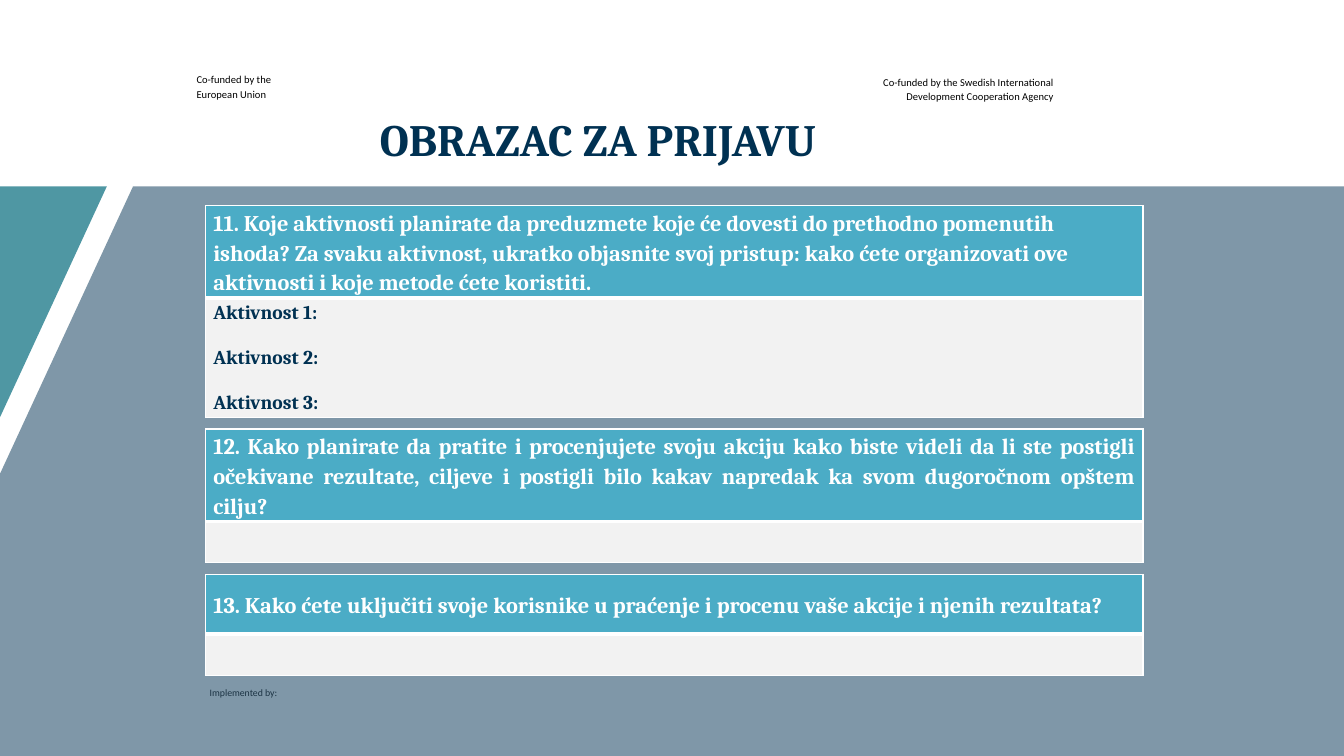
import pptx
import pptx.dml.color
import pptx.enum.text
import pptx.oxml
import pptx.oxml.ns
import pptx.util
import lxml.etree

Pt = pptx.util.Pt
ALIGN = pptx.enum.text.PP_ALIGN
MIDDLE = pptx.enum.text.MSO_ANCHOR.MIDDLE
WIDE, HIGH = 960, 540
COLORS = {"navy": "003152", "teal": "4F97A3", "head": "4BACC6",
          "body": "F2F2F2", "white": "FFFFFF", "gray": "373435",
          "black": "000000"}


def tint(name):
    return pptx.dml.color.RGBColor.from_string(COLORS[name])


def edge(side, width):
    """Return one white cell border; side is L, R, T or B."""
    return pptx.oxml.parse_xml(
        f'<a:ln{side} {pptx.oxml.ns.nsdecls("a")} w="{Pt(width)}"><a:solidFill>'
        f'<a:srgbClr val="{COLORS["white"]}"/></a:solidFill></a:ln{side}>')


class Form:
    def __init__(self, deck):
        self.slide = deck.slides.add_slide(deck.slide_layouts[5])
        self.shapes = self.slide.shapes

    def words(self, frame, text, size, color, font="Cambria", bold=True,
              align=ALIGN.LEFT, lines=1.0, before=0):
        frame.text = text
        frame.word_wrap = True
        for i, para in enumerate(frame.paragraphs):
            para.alignment = align
            para.line_spacing = lines
            para.space_before = Pt(before if i else 0)
            for run in para.runs:
                run.font.size = Pt(size)
                run.font.name = font
                run.font.bold = bold
                run.font.color.rgb = tint(color)

    def title(self, text, box):
        head = self.shapes.title
        head.left, head.top, head.width, head.height = map(Pt, box)
        head.text_frame.vertical_anchor = MIDDLE
        self.words(head.text_frame, text, 32, "navy", align=ALIGN.CENTER,
                   lines=0.9)

    def label(self, text, box, size=7.5, color="black", **style):
        frame = self.shapes.add_textbox(*map(Pt, box)).text_frame
        frame.margin_left = frame.margin_right = 0
        frame.margin_top = frame.margin_bottom = 0
        self.words(frame, text, size, color, font="Calibri", bold=False, **style)

    def outline(self, points, color, alpha=None):
        dots = [(Pt(x), Pt(y)) for x, y in points]
        pen = self.shapes.build_freeform(*dots[0])
        pen.add_line_segments(dots[1:])
        shape = pen.convert_to_shape()
        shape.shadow.inherit = False
        shape.line.fill.background()
        shape.fill.solid()
        shape.fill.fore_color.rgb = tint(color)
        if alpha:
            rgb = shape.element.spPr.find(".//" + pptx.oxml.ns.qn("a:srgbClr"))
            lxml.etree.SubElement(rgb, pptx.oxml.ns.qn("a:alpha"),
                                  val=str(alpha * 1000))

    def cell(self, cell, fill, top, bottom):
        cell.margin_left = cell.margin_right = Pt(5.4)
        cell.margin_top = cell.margin_bottom = 0
        cell.vertical_anchor = MIDDLE
        props = cell._tc.get_or_add_tcPr()
        for side, width in (("L", 1), ("R", 1), ("T", top), ("B", bottom)):
            props.append(edge(side, width))
        cell.fill.solid()
        cell.fill.fore_color.rgb = tint(fill)

    def question(self, top, heights, ask, answer, align):
        """Add a two-row table and return its bottom edge."""
        table = self.shapes.add_table(2, 1, Pt(147), Pt(top), Pt(669.5),
                                      Pt(sum(heights))).table
        for row, height in zip(table.rows, heights):
            row.height = Pt(height)
        head, body = table.cell(0, 0), table.cell(1, 0)
        self.cell(head, "head", 1, 3)
        self.cell(body, "body", 3, 1)
        self.words(head.text_frame, ask, 16, "white", align=align, lines=1.15)
        if answer:
            self.words(body.text_frame, answer, 14, "navy", before=16)
        return top + sum(heights)


QUESTIONS = [
    ((64, 85),
     "11. Koje aktivnosti planirate da preduzmete koje će dovesti do prethodno "
     "pomenutih ishoda? Za svaku aktivnost, ukratko objasnite svoj pristup: kako "
     "ćete organizovati ove aktivnosti i koje metode ćete koristiti.",
     "\n".join(f"Aktivnost {n}:" for n in (1, 2, 3)), ALIGN.LEFT),
    ((64, 29.5),
     "12. Kako planirate da pratite i procenjujete svoju akciju kako biste videli "
     "da li ste postigli očekivane rezultate, ciljeve i postigli bilo kakav "
     "napredak ka svom dugoročnom opštem cilju?", "", ALIGN.JUSTIFY),
    ((42.5, 29.5),
     "13. Kako ćete uključiti svoje korisnike u praćenje i procenu vaše akcije i "
     "njenih rezultata?", "", ALIGN.LEFT),
]


def main():
    deck = pptx.Presentation()
    deck.slide_width, deck.slide_height = Pt(WIDE), Pt(HIGH)
    form = Form(deck)
    form.title("OBRAZAC ZA PRIJAVU", (84.2, 69.8, 686.2, 63.4))
    form.label("Implemented by:", (149.8, 490.3, 102, 14.4), 7, "gray")
    form.label("Co-funded by the European Union", (140.4, 51.1, 73.4, 21.6),
               lines=1.15)
    form.label("Co-funded by the Swedish International Development Cooperation "
               "Agency", (617.8, 52.6, 134.6, 39.6), align=ALIGN.RIGHT,
               lines=1.15)
    band = 133.2
    form.outline([(95, band), (WIDE, band), (WIDE, HIGH), (0, HIGH), (0, 338.4)],
                 "navy", 50)
    form.outline([(0, band), (76.3, band), (0, 298.1)], "teal")
    top = 146.9
    for heights, ask, answer, align in QUESTIONS:
        top = form.question(top, heights, ask, answer, align) + 10.5
    deck.save("out.pptx")


if __name__ == "__main__":
    main()
